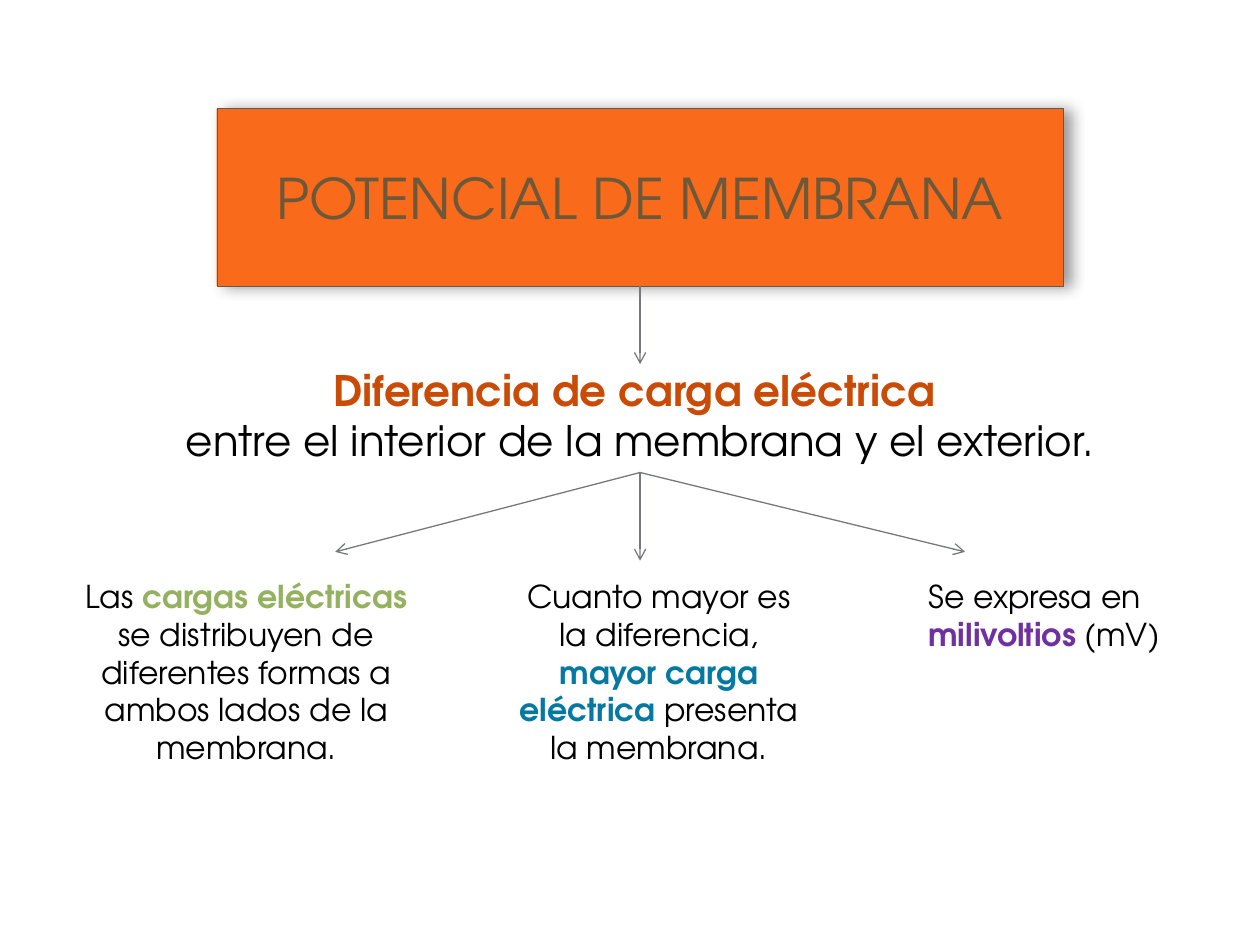
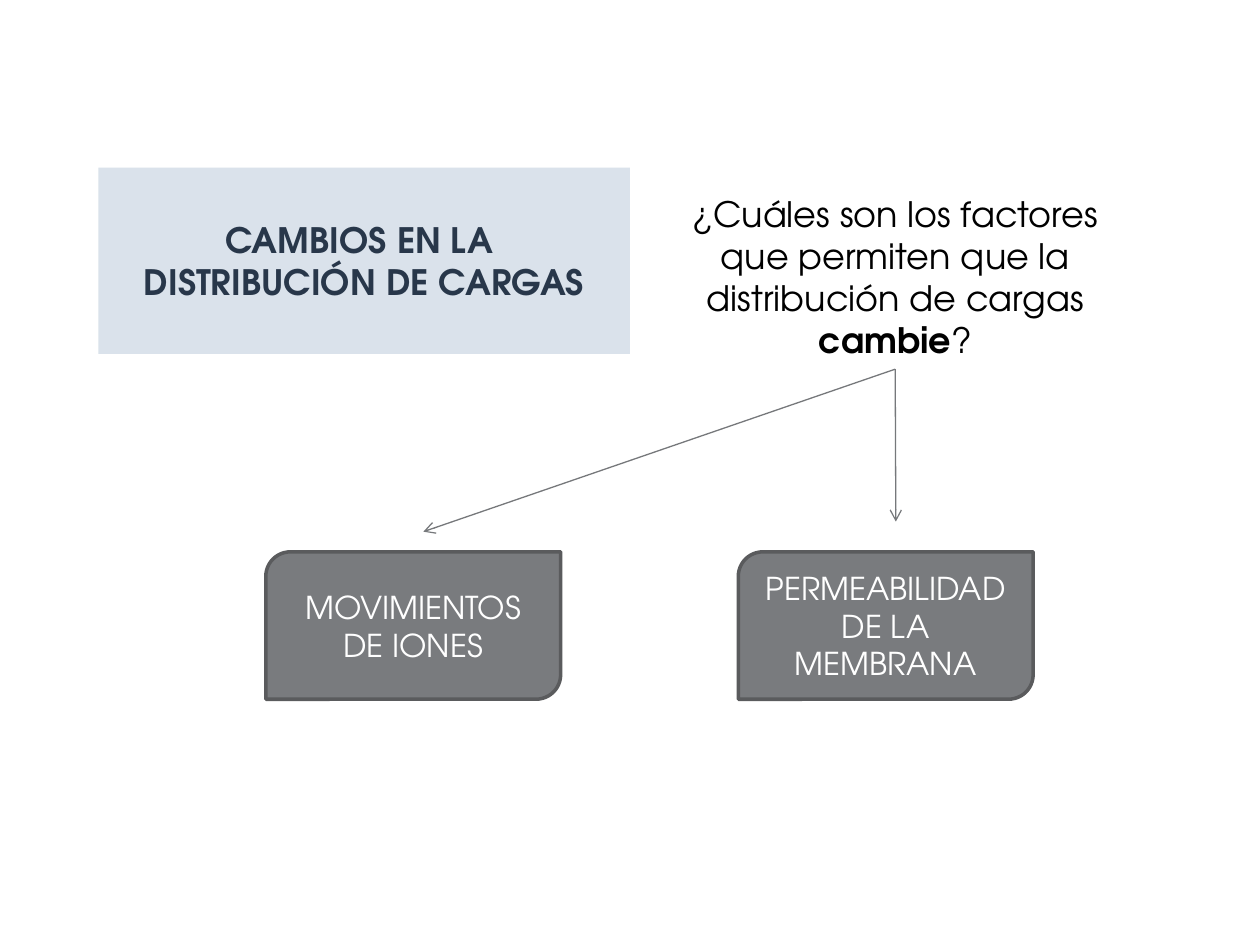
from pptx import Presentation
from pptx.dml.color import RGBColor
from pptx.enum.shapes import MSO_CONNECTOR, MSO_SHAPE
from pptx.enum.text import MSO_ANCHOR, MSO_AUTO_SIZE, PP_ALIGN
from pptx.oxml import parse_xml
from pptx.oxml.ns import nsdecls, qn
from pptx.util import Inches, Pt

RECT, DIAGONAL = MSO_SHAPE.RECTANGLE, MSO_SHAPE.ROUND_2_DIAG_RECTANGLE
STRAIGHT = MSO_CONNECTOR.STRAIGHT
LEFT, CENTER = PP_ALIGN.LEFT, PP_ALIGN.CENTER
TOP, MIDDLE = MSO_ANCHOR.TOP, MSO_ANCHOR.MIDDLE
GROW = MSO_AUTO_SIZE.SHAPE_TO_FIT_TEXT
BOTTOM_SIDE = 2

FONT = "TeX Gyre Adventor"
BLACK, WHITE = "000000", "FFFFFF"
ORANGE, BROWN, RUST = "F96A1B", "6D593A", "CA4B05"
GREEN, BLUE, PURPLE = "94B15F", "0679A3", "7030A0"
PALE_BLUE, NAVY = "DAE2EB", "28374A"
GRAY, DARK_GRAY, ARROW_GRAY = "797B7E", "5A5B5D", "76787B"


def add_box(s, at, size, paragraphs, align=CENTER, kind=None, fill=None, line=None, width=0):
    """Add a text box, or a filled shape if kind is given; a run is (text, colour, bold)."""
    x, y, w, h = map(Inches, at)
    if kind is None:
        sp = s.shapes.add_textbox(x, y, w, h)
    else:
        sp = s.shapes.add_shape(kind, x, y, w, h)
        sp.shadow.inherit = False
        sp.fill.solid()
        sp.fill.fore_color.rgb = RGBColor.from_string(fill)
        if line:
            sp.line.color.rgb = RGBColor.from_string(line)
            sp.line.width = Pt(width)
        else:
            sp.line.fill.background()
    tf = sp.text_frame
    tf.word_wrap = True
    tf.vertical_anchor = MIDDLE if kind else TOP
    if kind is None:
        tf.auto_size = GROW
    for i, runs in enumerate(paragraphs):
        p = tf.paragraphs[0] if i == 0 else tf.add_paragraph()
        p.alignment = align
        for text, color, bold in runs:
            r = p.add_run()
            r.text = text
            r.font.name = FONT
            r.font.size = Pt(size)
            r.font.bold = bold
            r.font.color.rgb = RGBColor.from_string(color)
    return sp


def add_arrow(s, source, x, y):
    """Draw an arrow from the bottom middle of source to the point x, y."""
    line = s.shapes.add_connector(STRAIGHT, 0, 0, Inches(x), Inches(y))
    line.begin_connect(source, BOTTOM_SIDE)
    line.line.color.rgb = RGBColor.from_string(ARROW_GRAY)
    line.line.width = Pt(0.75)
    spPr = line.element.spPr
    spPr.find(qn("a:ln")).append(parse_xml(f'<a:tailEnd {nsdecls("a")} type="arrow"/>'))
    spPr.append(parse_xml(f'<a:effectLst {nsdecls("a")}/>'))


prs = Presentation()
prs.slide_width, prs.slide_height = Inches(10), Inches(7.5)
blank = prs.slide_layouts[6]

# Slide 1: membrane potential
s = prs.slides.add_slide(blank)
title = add_box(s, (1.72, 0.86, 6.72, 1.41), 32, [[("POTENCIAL DE MEMBRANA", BROWN, False)]],
                kind=RECT, fill=ORANGE, line=DARK_GRAY, width=0.25)
title.element.spPr.find(qn("a:effectLst")).append(parse_xml(
    f'<a:outerShdw {nsdecls("a")} blurRad="{Pt(8)}" dist="{Pt(4)}" dir="0" rotWithShape="0">'
    f'<a:srgbClr val="{BLACK}"><a:alpha val="40000"/></a:srgbClr></a:outerShdw>'))
definition = add_box(s, (1.25, 2.84, 7.66, 0.91), 24, [
    [("Diferencia de carga eléctrica ", RUST, True)],
    [("entre el interior de la membrana y el exterior.", BLACK, False)],
])
add_arrow(s, title, 5.08, 2.89)

facts = [
    (0.55, 2.81, 1.62, CENTER, [
        ("Las ", BLACK, False), ("cargas eléctricas ", GREEN, True),
        ("se distribuyen de diferentes formas a ambos lados de la membrana.", BLACK, False)]),
    (3.98, 2.5, 1.62, CENTER, [
        ("Cuanto mayor es la diferencia, ", BLACK, False), ("mayor carga eléctrica ", BLUE, True),
        ("presenta la membrana.", BLACK, False)]),
    (7.27, 2.5, 0.71, LEFT, [
        ("Se expresa en ", BLACK, False), ("milivoltios", PURPLE, True), (" (mV)", BLACK, False)]),
]
for x, w, h, align, runs in facts:
    add_box(s, (x, 4.53, w, h), 18, [runs], align)
for x, y in [(2.66, 4.38), (7.66, 4.38), (5.08, 4.45)]:
    add_arrow(s, definition, x, y)

# Slide 2: changes in the distribution of charges
s = prs.slides.add_slide(blank)
add_box(s, (0.78, 1.33, 4.22, 1.48), 20,
        [[("CAMBIOS EN LA ", NAVY, True)], [("DISTRIBUCIÓN DE CARGAS", NAVY, True)]],
        kind=RECT, fill=PALE_BLUE)
question = add_box(s, (5.23, 1.48, 3.75, 1.45), 20, [[
    ("¿Cuáles son los factores que permiten que la distribución de cargas ", BLACK, False),
    ("cambie", BLACK, True), ("?", BLACK, False),
]])
factors = [
    (2.11, "MOVIMIENTOS DE IONES", (3.36, 4.22)),
    (5.86, "PERMEABILIDAD DE LA MEMBRANA", (7.11, 4.14)),
]
for x, text, tip in factors:
    add_box(s, (x, 4.38, 2.34, 1.17), 18, [[(text, WHITE, False)]],
            kind=DIAGONAL, fill=GRAY, line=DARK_GRAY, width=2)
    add_arrow(s, question, *tip)

prs.save("out.pptx")
